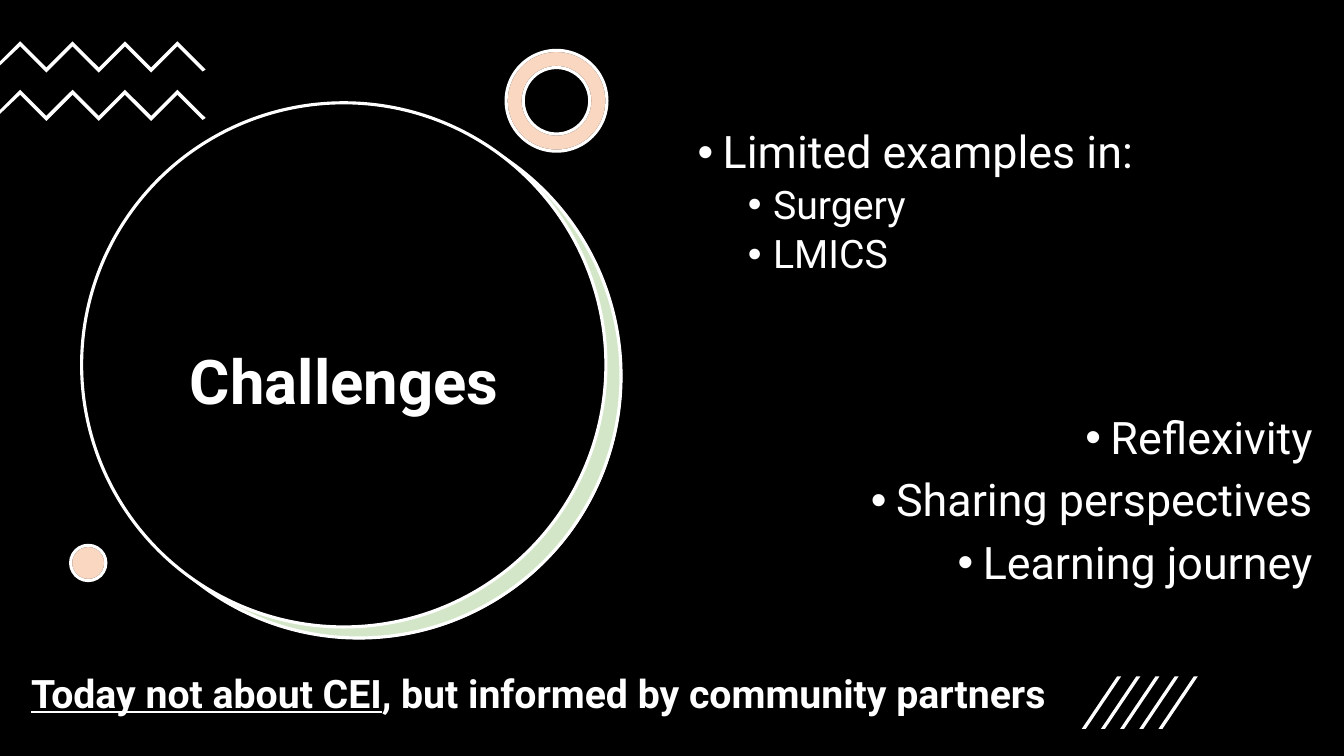
from lxml import etree
from pptx import Presentation
from pptx import util as u
from pptx.dml.color import RGBColor
from pptx.enum import shapes, text
from pptx.oxml import ns

SCALE = 9144
SLIDE_SIZE = (1333, 750)
FONT = "Roboto"
COLORS = {"black": "000000", "white": "FFFFFF", "green": "70AD47", "orange": "ED7D31"}

OVAL, DONUT = shapes.MSO_SHAPE.OVAL, shapes.MSO_SHAPE.DONUT
LEFT, CENTER, RIGHT = text.PP_ALIGN.LEFT, text.PP_ALIGN.CENTER, text.PP_ALIGN.RIGHT

TITLE = "Challenges"
TITLE_BOX = (121, 205, 441, 352)
BODY_BOX = (682, 124, 630, 476)
BODY = [
    ("Limited examples in:", 0, LEFT, 0),
    ("Surgery", 1, LEFT, 5),
    ("LMICS", 1, LEFT, 5),
    ("Reflexivity", 0, RIGHT, 99),
    ("Sharing perspectives", 0, RIGHT, 10),
    ("Learning journey", 0, RIGHT, 10),
]
BODY_LEVELS = [(32, 25), (28, 75)]
FOOTER = [("Today not about CEI", True), (", but informed by community partners", False)]
FOOTER_BOX = (21, 659, 1167, 57)

RING = (502, 50, 100, 100)
DOT = (70, 541, 35, 35)
ROUND_SHAPES = [
    (OVAL, (97, 114, 520, 520), "white", 100, None),
    (OVAL, (96, 113, 520, 520), "green", 30, "white"),
    (OVAL, (81, 102, 520, 520), "black", 100, "white"),
    (DONUT, RING, "white", 100, "black"),
    (DONUT, RING, "orange", 30, "white"),
    (OVAL, DOT, "white", 100, "black"),
    (OVAL, DOT, "orange", 30, "white"),
]
RING_THICKNESS = 0.17

ZIGZAG_TOPS = [41, 89]
ZIGZAG_START, ZIGZAG_STEP, ZIGZAG_TURNS, ZIGZAG_RISE, ZIGZAG_BAND = 20, 26, 7, 26, 5
SLASH_START, SLASH_PITCH, SLASH_COUNT = 1073, 19, 5
SLASH_TOP, SLASH_HEIGHT, SLASH_LEAN, SLASH_WIDTH = 671, 52, 35, 4


def emu(values):
    return [value * SCALE for value in values]


def color(name):
    return RGBColor.from_string(COLORS[name])


def paint(shape, fill, opacity=100, line=None):
    shape.shadow.inherit = False
    shape.fill.solid()
    shape.fill.fore_color.rgb = color(fill)
    if opacity < 100:
        fill_color = shape._element.spPr.find(".//" + ns.qn("a:srgbClr"))
        etree.SubElement(fill_color, ns.qn("a:alpha"), val=str(opacity * 1000))
    if line:
        shape.line.color.rgb = color(line)
        shape.line.width = u.Pt(2.25)
    else:
        shape.line.fill.background()


def add_outline(slide, points):
    builder = slide.shapes.build_freeform(*points[0], scale=SCALE)
    builder.add_line_segments(points[1:], close=True)
    paint(builder.convert_to_shape(), "white")


def zigzag(top):
    turns = [
        (ZIGZAG_START + i * ZIGZAG_STEP, top + i % 2 * ZIGZAG_RISE)
        for i in range(ZIGZAG_TURNS)
    ]
    lower = [(x, y + ZIGZAG_BAND) for x, y in reversed(turns)]
    right_end = [(204, top + 28), (201, top + 30)]
    left_end = [(0, top + 24), (0, top + 20)]
    return turns + right_end + lower + left_end


def slash(index):
    left = SLASH_START + index * SLASH_PITCH
    bottom = SLASH_TOP + SLASH_HEIGHT
    return [
        (left + SLASH_WIDTH, bottom),
        (left, bottom),
        (left + SLASH_LEAN, SLASH_TOP),
        (left + SLASH_LEAN + SLASH_WIDTH, SLASH_TOP),
    ]


def add_frame(slide, box):
    frame = slide.shapes.add_textbox(*emu(box)).text_frame
    frame.word_wrap = True
    return frame


def style(run, size, bold=False, underline=False):
    run.font.name = FONT
    run.font.size = u.Pt(size)
    run.font.bold = bold
    run.font.underline = underline
    run.font.color.rgb = color("white")


def add_bullet(paragraph, indent):
    properties = paragraph._p.get_or_add_pPr()
    properties.set("marL", str(indent * SCALE))
    properties.set("indent", str(-25 * SCALE))
    etree.SubElement(properties, ns.qn("a:buFont"), typeface="Arial")
    etree.SubElement(properties, ns.qn("a:buChar"), char="•")


def add_title(slide):
    frame = add_frame(slide, TITLE_BOX)
    frame.vertical_anchor = text.MSO_ANCHOR.MIDDLE
    frame.text = TITLE
    paragraph = frame.paragraphs[0]
    paragraph.alignment = CENTER
    paragraph.line_spacing = 0.9
    style(paragraph.runs[0], 44, bold=True)


def add_body(slide):
    frame = add_frame(slide, BODY_BOX)
    frame.text = "\n".join(item[0] for item in BODY)
    for paragraph, (_, level, alignment, space) in zip(frame.paragraphs, BODY):
        size, indent = BODY_LEVELS[level]
        paragraph.level = level
        paragraph.alignment = alignment
        paragraph.line_spacing = 0.9
        paragraph.space_before = u.Pt(space)
        add_bullet(paragraph, indent)
        style(paragraph.runs[0], size)


def add_footer(slide):
    paragraph = add_frame(slide, FOOTER_BOX).paragraphs[0]
    for words, underline in FOOTER:
        run = paragraph.add_run()
        run.text = words
        style(run, 28, bold=True, underline=underline)


def main():
    presentation = Presentation()
    presentation.slide_width, presentation.slide_height = emu(SLIDE_SIZE)
    slide = presentation.slides.add_slide(presentation.slide_layouts[6])
    slide.background.fill.solid()
    slide.background.fill.fore_color.rgb = color("black")

    for kind, box, fill, opacity, line in ROUND_SHAPES:
        shape = slide.shapes.add_shape(kind, *emu(box))
        if kind == DONUT:
            shape.adjustments[0] = RING_THICKNESS
        paint(shape, fill, opacity, line)
    for top in ZIGZAG_TOPS:
        add_outline(slide, zigzag(top))
    for index in range(SLASH_COUNT):
        add_outline(slide, slash(index))

    add_title(slide)
    add_body(slide)
    add_footer(slide)
    presentation.save("out.pptx")


if __name__ == "__main__":
    main()
